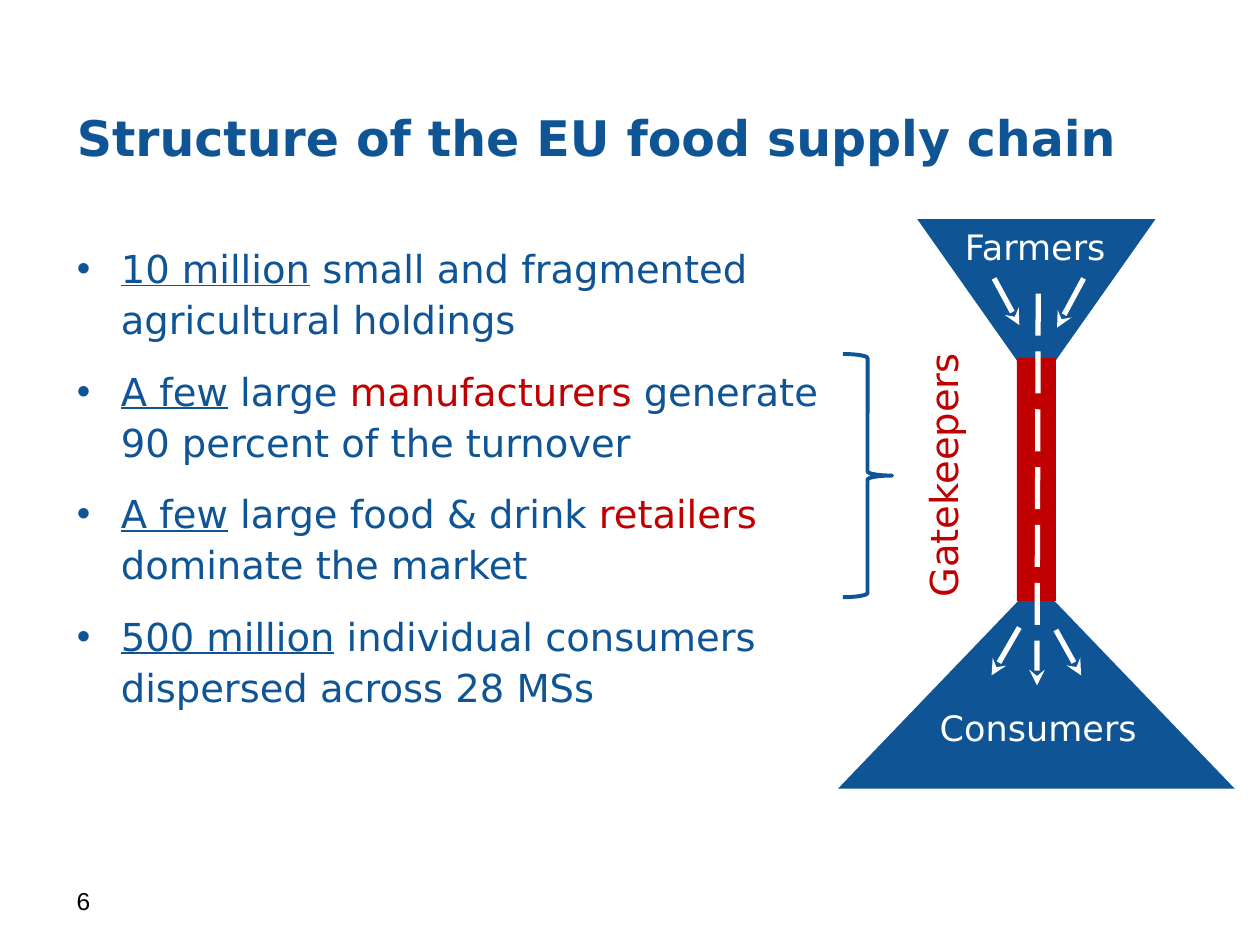
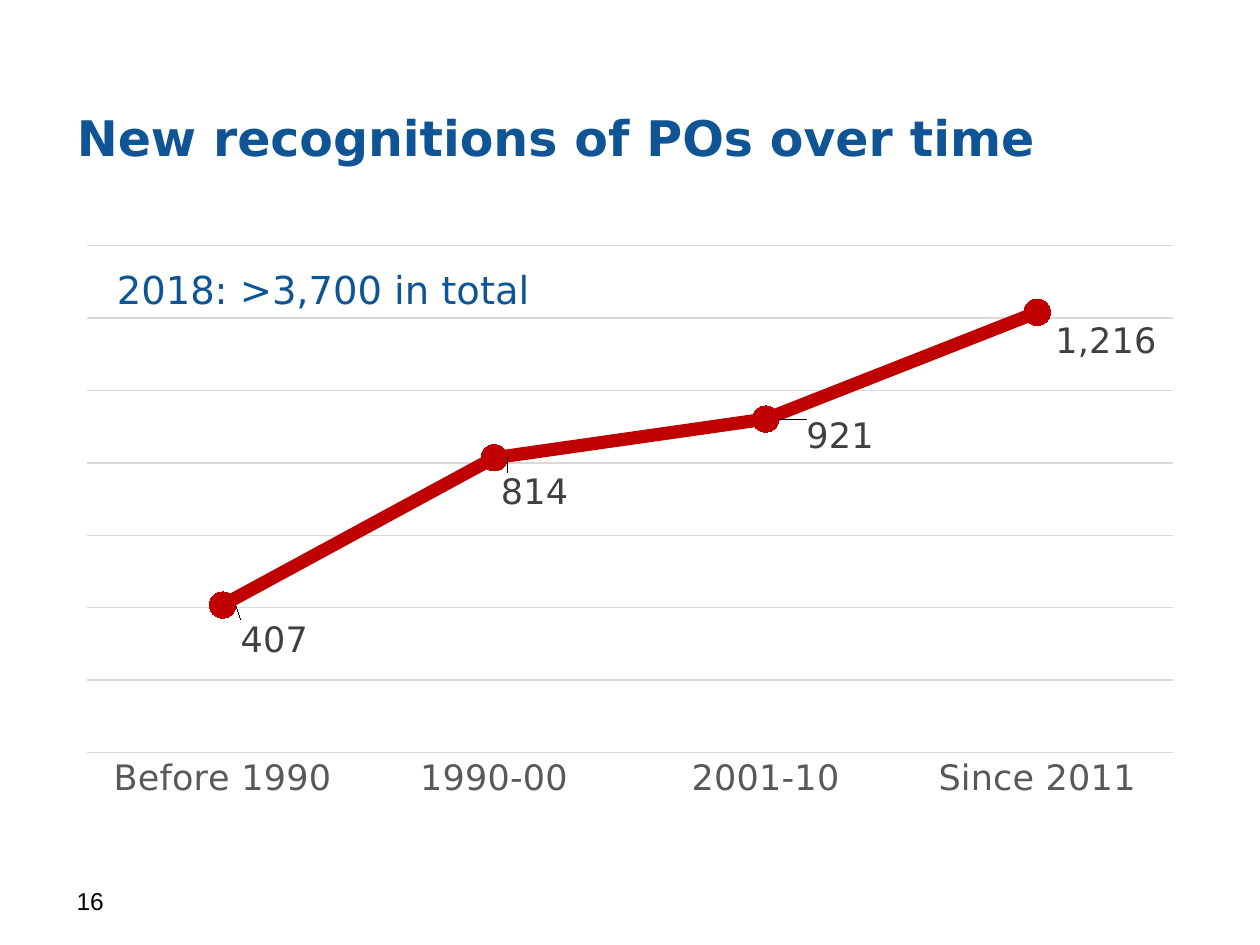
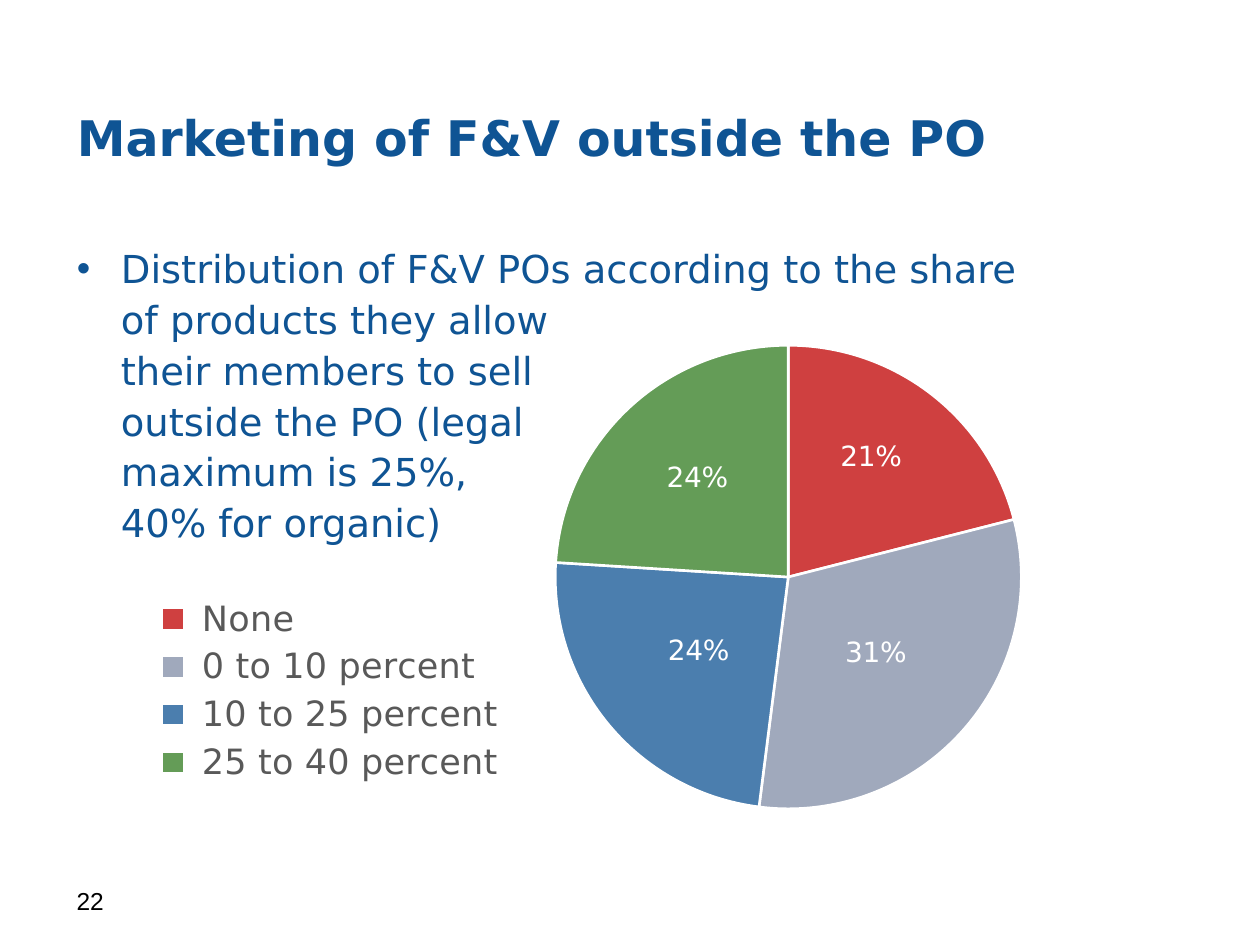
from copy import deepcopy
from dataclasses import dataclass

from lxml import etree
from pptx import Presentation
from pptx import util as u
from pptx.chart import data as chart_data
from pptx.dml.color import RGBColor
from pptx.enum import chart as charts
from pptx.enum import dml, shapes, text
from pptx.oxml.ns import qn


@dataclass(frozen=True)
class Theme:
    blue: str = "0F5494"
    red: str = "C00000"
    slate: str = "818DA6"
    green: str = "317B1F"
    white: str = "FFFFFF"
    black: str = "000000"
    label_gray: str = "404040"
    axis_gray: str = "595959"
    grid_gray: str = "D9D9D9"
    font: str = "DejaVu Sans"
    number_font: str = "Arial"
    title_size: int = 28
    body_size: int = 22
    label_size: int = 20
    slice_label_size: int = 16
    number_size: int = 14
    chart_size: int = 10


THEME = Theme()


def apply(target, formats):
    for name, value in formats.items():
        setattr(target, name, value)


def box(left, top, width, height):
    return [u.Inches(value) for value in (left, top, width, height)]


def format_font(font, size, color, name=THEME.font, **formats):
    apply(font, {"name": name, "size": u.Pt(size), **formats})
    font.color.rgb = RGBColor.from_string(color)


def format_line(line, color, width):
    line.color.rgb = RGBColor.from_string(color)
    line.width = u.Pt(width)


def paint(fill, color):
    fill.solid()
    fill.fore_color.rgb = RGBColor.from_string(color)


def set_indent(paragraph, inches):
    properties = paragraph._p.get_or_add_pPr()
    properties.set("marL", str(u.Inches(inches)))
    properties.set("indent", str(-u.Inches(inches)))
    return properties


def set_layout(parent, index, **entries):
    for existing in parent.findall(qn("c:layout")):
        parent.remove(existing)
    layout = etree.Element(qn("c:layout"))
    manual = etree.SubElement(layout, qn("c:manualLayout"))
    for name, value in entries.items():
        etree.SubElement(manual, qn(f"c:{name}")).set("val", str(value))
    parent.insert(index, layout)


def set_frame(parent, index, left, top, width, height, **target):
    set_layout(parent, index, **target, xMode="edge", yMode="edge",
               x=left, y=top, w=width, h=height)


class Deck:
    def __init__(self, theme):
        self.theme = theme
        self.presentation = Presentation()
        apply(self.presentation, {"slide_width": u.Inches(10), "slide_height": u.Inches(7.5)})

    def start_slide(self, title, number, layout):
        self.slide = self.presentation.slides.add_slide(self.presentation.slide_layouts[layout])
        self.shapes = self.slide.shapes
        shape = self.shapes.title
        self.place(shape, 0.51, 0.62, 8.98, 0.93)
        apply(shape.text_frame, {"auto_size": text.MSO_AUTO_SIZE.NONE,
                                 "vertical_anchor": text.MSO_ANCHOR.MIDDLE})
        paragraph = shape.text_frame.paragraphs[0]
        paragraph.alignment = text.PP_ALIGN.LEFT
        set_indent(paragraph, 0.39)
        self.add_words(paragraph, title, self.theme.title_size, self.theme.blue, bold=True)
        self.text_box(number, (0.51, 6.98, 2.33, 0.52), self.theme.number_size,
                      self.theme.black, wrap=True, name=self.theme.number_font)

    def start_group(self):
        self.shapes = self.slide.shapes.add_group_shape().shapes

    def place(self, shape, *position):
        apply(shape, dict(zip(("left", "top", "width", "height"), box(*position))))

    def add_words(self, paragraph, words, size, color, **formats):
        for index, line in enumerate(words.split("\n")):
            if index:
                paragraph.add_line_break()
                paragraph._p.findall(qn("a:br"))[-1].append(deepcopy(run._r.rPr))
            run = paragraph.add_run()
            run.text = line
            format_font(run.font, size, color, **formats)

    def bullets(self, items):
        shape = self.slide.placeholders[1]
        self.place(shape, 0.51, 1.86, 8.99, 4.57)
        frame = shape.text_frame
        frame.auto_size = text.MSO_AUTO_SIZE.NONE
        for index, item in enumerate(items):
            paragraph = frame.add_paragraph() if index else frame.paragraphs[0]
            properties = set_indent(paragraph, 0.35)
            bullet_color = etree.SubElement(properties, qn("a:buClr"))
            etree.SubElement(bullet_color, qn("a:srgbClr")).set("val", self.theme.blue)
            etree.SubElement(properties, qn("a:buChar")).set("char", "•")
            apply(paragraph, {"line_spacing": 1.1, "space_before": u.Pt(12 if index else 0)})
            for words, formats in item:
                self.add_words(paragraph, words, self.theme.body_size,
                               **{"color": self.theme.blue, **formats})

    def text_box(self, words, position, size, color, wrap=False, rotation=0, **formats):
        shape = self.shapes.add_textbox(*box(*position))
        shape.rotation = rotation
        fit = text.MSO_AUTO_SIZE.NONE if wrap else text.MSO_AUTO_SIZE.SHAPE_TO_FIT_TEXT
        apply(shape.text_frame, {"word_wrap": wrap, "auto_size": fit})
        self.add_words(shape.text_frame.paragraphs[0], words, size, color, **formats)

    def filled_shape(self, kind, position, color, flipped=False):
        shape = self.shapes.add_shape(kind, *box(*position))
        shape.shadow.inherit = False
        paint(shape.fill, color)
        shape.line.fill.background()
        if flipped:
            shape._element.spPr.xfrm.set("flipV", "1")

    def brace(self, position):
        shape = self.shapes.add_shape(shapes.MSO_SHAPE.RIGHT_BRACE, *box(*position))
        shape.shadow.inherit = False
        shape.fill.background()
        format_line(shape.line, self.theme.blue, 2.25)

    def arrow(self, start, end, dash=None):
        connector = self.shapes.add_connector(shapes.MSO_CONNECTOR.STRAIGHT, *box(*start, *end))
        format_line(connector.line, self.theme.white, 3)
        connector.line.dash_style = dash
        properties = connector._element.spPr
        etree.SubElement(properties.find(qn("a:ln")), qn("a:tailEnd")).set("type", "stealth")
        etree.SubElement(properties, qn("a:effectLst"))

    def chart(self, kind, position, categories, values, number_format="General"):
        source = chart_data.CategoryChartData(number_format=number_format)
        source.categories = categories
        source.add_series("Series 1", values)
        chart = self.shapes.add_chart(kind, *box(*position), source).chart
        chart.has_title = False
        chart.has_legend = False
        format_font(chart.font, self.theme.chart_size, self.theme.black)
        return chart

    def data_labels(self, series, size, color, position, offsets, number_format, percent=False):
        labels = series.data_labels
        apply(labels, {"show_value": not percent, "show_percentage": percent,
                       "number_format": number_format, "number_format_is_linked": False,
                       "position": position})
        format_font(labels.font, size, color)
        for index, (across, down) in enumerate(offsets):
            label = series.points[index].data_label
            label.position = position
            format_font(label.font, size, color)
            element = label._get_or_add_dLbl()
            element.find(qn("c:showVal")).set("val", str(int(not percent)))
            element.find(qn("c:showPercent")).set("val", str(int(percent)))
            set_layout(element, 1, x=across, y=down)

    def line_chart(self, position, categories, values, offsets):
        theme = self.theme
        chart = self.chart(charts.XL_CHART_TYPE.LINE_MARKERS, position, categories, values, "#,##0")
        set_frame(chart._chartSpace.chart.plotArea, 0, 0.02, 0.02, 0.96, 0.88, layoutTarget="inner")
        chart.plots[0].vary_by_categories = False
        category_axis, value_axis = chart.category_axis, chart.value_axis
        apply(category_axis, {"major_tick_mark": charts.XL_TICK_MARK.NONE,
                              "minor_tick_mark": charts.XL_TICK_MARK.NONE})
        format_line(category_axis.format.line, theme.grid_gray, 0.75)
        format_font(category_axis.tick_labels.font, theme.label_size, theme.axis_gray)
        apply(value_axis, {"visible": False, "minimum_scale": 0, "maximum_scale": 1400,
                           "major_unit": 200, "has_major_gridlines": True})
        format_line(value_axis.major_gridlines.format.line, theme.grid_gray, 0.75)
        series = chart.plots[0].series[0]
        series.smooth = False
        format_line(series.format.line, theme.red, 7.5)
        apply(series.marker, {"style": charts.XL_MARKER_STYLE.CIRCLE, "size": 15})
        paint(series.marker.format.fill, theme.red)
        format_line(series.marker.format.line, theme.red, 0.75)
        self.data_labels(series, theme.label_size, theme.label_gray,
                         charts.XL_LABEL_POSITION.RIGHT, offsets, "#,##0")

    def pie_chart(self, position, categories, values, colors, offsets):
        theme = self.theme
        chart = self.chart(charts.XL_CHART_TYPE.PIE, position, categories, values)
        set_frame(chart._chartSpace.chart.plotArea, 0, 0.42, 0, 0.44, 1, layoutTarget="inner")
        chart.plots[0].vary_by_categories = True
        series = chart.plots[0].series[0]
        for index, color in enumerate(colors):
            paint(series.points[index].format.fill, color)
        for color_element in list(series._element.iter(qn("a:srgbClr"))):
            etree.SubElement(color_element, qn("a:alpha")).set("val", "75000")
        for index in range(len(colors)):
            format_line(series.points[index].format.line, theme.white, 1.5)
        self.data_labels(series, theme.slice_label_size, theme.white,
                         charts.XL_LABEL_POSITION.CENTER, offsets, "0%", percent=True)
        chart.has_legend = True
        apply(chart.legend, {"position": charts.XL_LEGEND_POSITION.BOTTOM,
                             "include_in_layout": False})
        format_font(chart.legend.font, theme.label_size, theme.axis_gray)
        set_frame(chart.legend._element, 1, 0.07, 0.53, 0.33, 0.43)


def build_supply_chain(deck):
    theme = deck.theme
    underlined, red = {"underline": True}, {"color": theme.red}
    deck.start_slide("Structure of the EU food supply chain", "6", 1)
    deck.bullets([
        [("10 million", underlined), (" small and fragmented\nagricultural holdings", {})],
        [("A few", underlined), (" large ", {}), ("manufacturers", red),
         (" generate\n90 percent of the turnover", {})],
        [("A few", underlined), (" large food & drink ", {}), ("retailers", red),
         ("\ndominate the market", {})],
        [("500 million", underlined), (" individual consumers\ndispersed across 28 MSs", {})],
    ])
    deck.brace((6.69, 2.81, 0.39, 1.93))
    deck.start_group()
    triangle = shapes.MSO_SHAPE.ISOSCELES_TRIANGLE
    deck.filled_shape(triangle, (6.65, 4.62, 3.15, 1.64), theme.blue)
    deck.filled_shape(triangle, (7.28, 1.74, 1.89, 1.34), theme.blue, flipped=True)
    deck.filled_shape(shapes.MSO_SHAPE.RECTANGLE, (8.07, 2.84, 0.31, 1.93), theme.red)
    deck.text_box("Gatekeepers", (6.41, 3.53, 2.15, 0.47), theme.body_size, theme.red, rotation=270)
    for words, position in (("Farmers", (7.56, 1.74, 1.34, 0.44)),
                            ("Consumers", (7.36, 5.56, 1.77, 0.44))):
        deck.text_box(words, position, theme.label_size, theme.white)
    flows = [
        ((8.24, 2.33), (8.23, 5.44), dml.MSO_LINE.LONG_DASH),
        ((7.89, 2.21), (8.09, 2.58)),
        ((8.6, 2.21), (8.39, 2.6)),
        ((8.09, 4.98), (7.87, 5.36)),
        ((8.38, 5), (8.58, 5.36)),
    ]
    for flow in flows:
        deck.arrow(*flow)


def build_recognitions(deck):
    deck.start_slide("New recognitions of POs over time", "16", 5)
    deck.line_chart((0.51, 1.86, 8.98, 4.57),
                    ["Before 1990", "1990-00", "2001-10", "Since 2011"],
                    [407, 814, 921, 1216],
                    [(0, 0.06), (-0.01, 0.06), (0.02, 0.03), (0, 0.05)])
    deck.text_box("2018: >3,700 in total", (0.83, 2.06, 3.58, 0.47),
                  deck.theme.body_size, deck.theme.blue)


def build_marketing(deck):
    theme = deck.theme
    deck.start_slide("Marketing of F&V outside the PO", "22", 1)
    deck.bullets([[(
        "Distribution of F&V POs according to the share\nof products they allow\n"
        "their members to sell\noutside the PO (legal\nmaximum is 25%,\n40% for organic)", {})]])
    deck.pie_chart((0.51, 2.73, 8.98, 3.7),
                   [" None", " 0 to 10 percent", " 10 to 25 percent", " 25 to 40 percent"],
                   [21, 31, 24, 24],
                   [theme.red, theme.slate, theme.blue, theme.green],
                   [(0.01, -0.06), (0, 0), (0, 0), (-0.01, -0.03)])


def main():
    deck = Deck(THEME)
    build_supply_chain(deck)
    build_recognitions(deck)
    build_marketing(deck)
    deck.presentation.save("out.pptx")


if __name__ == "__main__":
    main()
